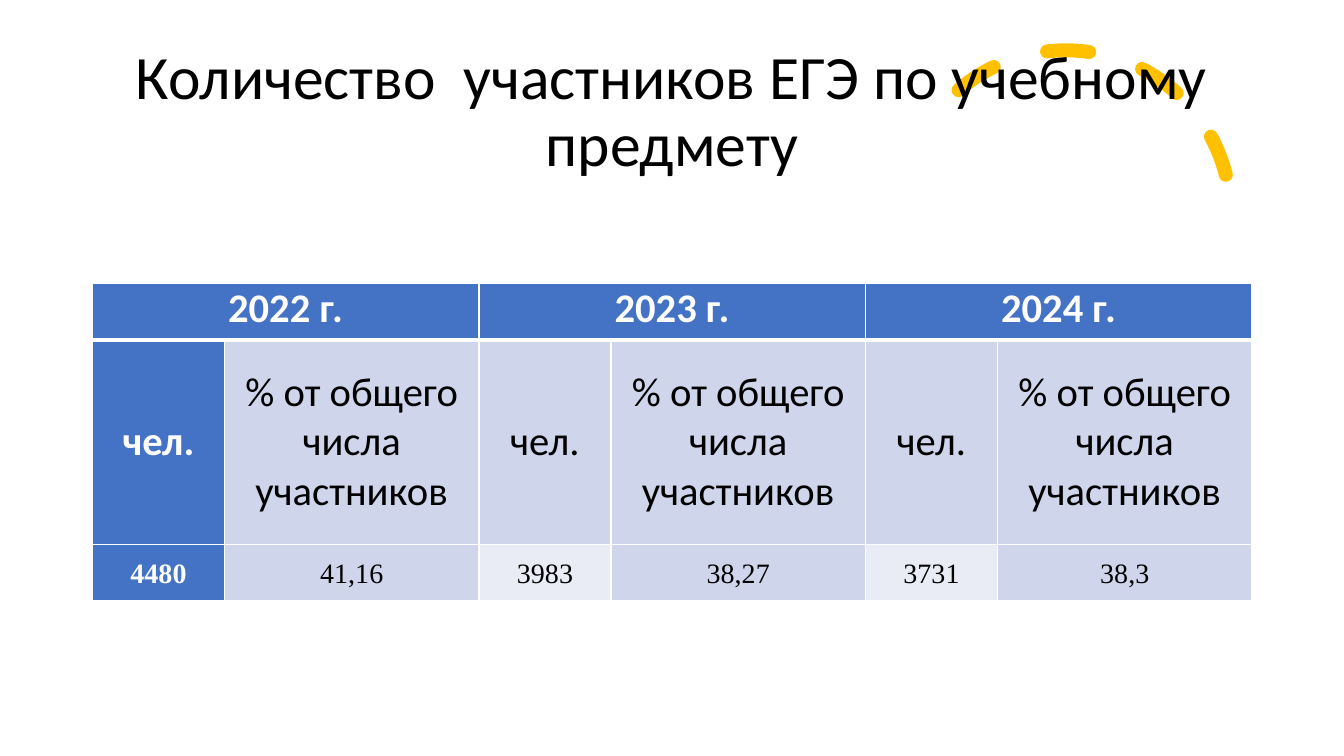
from dataclasses import dataclass

from lxml import etree
from pptx import Presentation
from pptx.dml.color import RGBColor
from pptx.enum.dml import MSO_LINE
from pptx.enum.shapes import MSO_SHAPE
from pptx.enum.text import MSO_ANCHOR, MSO_AUTO_SIZE, PP_ALIGN
from pptx.oxml.ns import qn
from pptx.util import Cm, Pt

CENTER = PP_ALIGN.CENTER
TOP, MIDDLE = MSO_ANCHOR.TOP, MSO_ANCHOR.MIDDLE
NO_AUTOFIT = MSO_AUTO_SIZE.NONE
ARC, DASH = MSO_SHAPE.ARC, MSO_LINE.DASH
TITLE_ONLY = 5

WHITE, BLACK, GOLD = "FFFFFF", "000000", "FFC000"
BLUE, PALE_BLUE, PALEST_BLUE = "4472C4", "CFD5EA", "E9EBF5"

YEARS = ["2022 г.", "2023 г.", "2024 г."]
MEASURES = ["чел.", "% от общего числа участников"]
RESULTS = ["4480", "41,16", "3983", "38,27", "3731", "38,3"]
MEASURE_WIDTHS = [3.33, 6.41]
ROW_HEIGHTS = [1.42, 5.16, 1.42]


@dataclass(frozen=True)
class RowStyle:
    font: str
    size: float
    anchor: MSO_ANCHOR
    side_margin: float
    line_spacing: float
    top_border: float
    bottom_border: float


YEAR_ROW = RowStyle("Calibri", 29, TOP, 0.24, 1.0, 1, 3)
MEASURE_ROW = RowStyle("Calibri", 29, MIDDLE, 0.24, 1.0, 3, 1)
RESULT_ROW = RowStyle("Times New Roman", 20, MIDDLE, 0.19, 1.07, 1, 1)


def rgb(value: str) -> RGBColor:
    return RGBColor.from_string(value)


def write(frame, text: str, font: str, size: float, color: str,
          bold: bool, line_spacing: float) -> None:
    paragraph = frame.paragraphs[0]
    paragraph.alignment = CENTER
    paragraph.line_spacing = line_spacing
    run = paragraph.add_run()
    run.text = text
    run.font.name = font
    run.font.size = Pt(size)
    run.font.bold = bold
    run.font.color.rgb = rgb(color)


def set_borders(cell, style: RowStyle) -> None:
    widths = {"a:lnL": 1, "a:lnR": 1,
              "a:lnT": style.top_border, "a:lnB": style.bottom_border}
    properties = cell._tc.get_or_add_tcPr()
    for position, (side, width) in enumerate(widths.items()):
        border = etree.Element(qn(side), w=str(Pt(width)))
        fill = etree.SubElement(border, qn("a:solidFill"))
        etree.SubElement(fill, qn("a:srgbClr"), val=WHITE)
        properties.insert(position, border)


def fill_cell(cell, text: str, style: RowStyle, fill: str) -> None:
    cell.fill.solid()
    cell.fill.fore_color.rgb = rgb(fill)
    cell.vertical_anchor = style.anchor
    cell.margin_left = cell.margin_right = Cm(style.side_margin)
    cell.margin_top = cell.margin_bottom = 0
    set_borders(cell, style)
    if text:
        heading = fill == BLUE
        write(cell.text_frame, text, style.font, style.size,
              WHITE if heading else BLACK, heading, style.line_spacing)


def add_dashed_arc(slide) -> None:
    arc = slide.shapes.add_shape(ARC, Cm(22.71), Cm(1.27), Cm(8.31), Cm(8.31))
    arc.adjustments[0] = 146.13
    arc.adjustments[1] = 0
    arc.rotation = 345.8
    arc.shadow.inherit = False
    arc.fill.background()
    arc.line.color.rgb = rgb(GOLD)
    arc.line.width = Pt(10)
    arc.line.dash_style = DASH
    outline = arc.line._get_or_add_ln()
    outline.set("cap", "rnd")
    etree.SubElement(outline, qn("a:round"))
    # Send the arc behind the title
    slide.shapes._spTree.insert(2, arc._element)


def add_title(slide) -> None:
    title = slide.shapes.title
    title.left, title.top = Cm(2.33), Cm(1.01)
    title.width, title.height = Cm(29.21), Cm(3.68)
    frame = title.text_frame
    frame.word_wrap = True
    frame.auto_size = NO_AUTOFIT
    frame.vertical_anchor = MIDDLE
    write(frame, "Количество  участников ЕГЭ по учебному предмету",
          "Calibri", 44, BLACK, False, 0.9)


def add_participants_table(slide) -> None:
    widths = MEASURE_WIDTHS * len(YEARS)
    participants = slide.shapes.add_table(
        len(ROW_HEIGHTS), len(widths), Cm(2.33), Cm(7.14),
        Cm(sum(widths)), Cm(sum(ROW_HEIGHTS))).table
    participants.first_col = True
    participants.horz_banding = False
    for column, width in zip(participants.columns, widths):
        column.width = Cm(width)
    for row, height in zip(participants.rows, ROW_HEIGHTS):
        row.height = Cm(height)

    for index, result in enumerate(RESULTS):
        year, measure = divmod(index, len(MEASURES))
        first_of_year = measure == 0
        # Year heading, spanning its measures
        year_cell = participants.cell(0, index)
        fill_cell(year_cell, YEARS[year] if first_of_year else "", YEAR_ROW, BLUE)
        if first_of_year:
            year_cell.merge(participants.cell(0, index + len(MEASURES) - 1))
        # Measure and result below it
        measure_fill = BLUE if index == 0 else PALE_BLUE
        result_fill = PALEST_BLUE if index and first_of_year else measure_fill
        fill_cell(participants.cell(1, index), MEASURES[measure],
                  MEASURE_ROW, measure_fill)
        fill_cell(participants.cell(2, index), result, RESULT_ROW, result_fill)


def main() -> None:
    deck = Presentation()
    deck.slide_width, deck.slide_height = Cm(33.87), Cm(19.05)
    slide = deck.slides.add_slide(deck.slide_layouts[TITLE_ONLY])
    slide.background.fill.solid()
    slide.background.fill.fore_color.rgb = rgb(WHITE)
    add_dashed_arc(slide)
    add_title(slide)
    add_participants_table(slide)
    deck.save("out.pptx")


if __name__ == "__main__":
    main()
